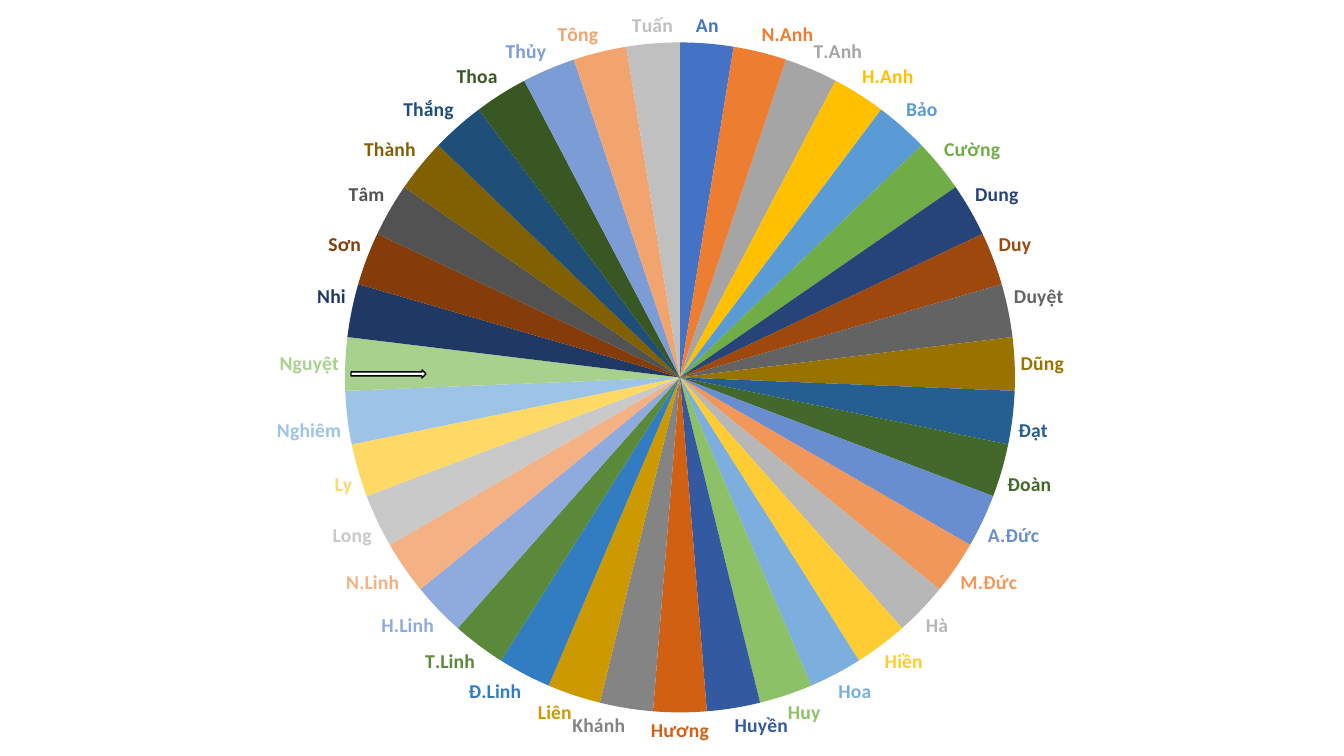
"""Build a name wheel: a pie of equal slices with a pointer arrow."""
from dataclasses import dataclass

from lxml.etree import SubElement
from pptx import Presentation
from pptx.chart.chart import Chart
from pptx.chart.data import CategoryChartData
from pptx.dml.color import RGBColor
from pptx.enum.chart import XL_CHART_TYPE, XL_LABEL_POSITION
from pptx.enum.shapes import MSO_SHAPE
from pptx.oxml.ns import qn
from pptx.util import Emu, Pt

PAGE_WIDTH, PAGE_HEIGHT = 1344, 756
SCALE = 12192000 / PAGE_WIDTH
SLICE_VALUE = 3
FONT = "Calibri"
BLACK = RGBColor(0x00, 0x00, 0x00)
WHITE = RGBColor(0xFF, 0xFF, 0xFF)


@dataclass(frozen=True)
class Slice:
    name: str
    colour: RGBColor


@dataclass(frozen=True)
class Area:
    left: int
    top: int
    width: int
    height: int


WHEEL = Area(345, 42, 670, 671)
POINTER = Area(351, 370, 75, 8)

SLICES = [
    Slice("An", RGBColor(0x44, 0x72, 0xC4)),
    Slice("N.Anh", RGBColor(0xED, 0x7D, 0x31)),
    Slice("T.Anh", RGBColor(0xA5, 0xA5, 0xA5)),
    Slice("H.Anh", RGBColor(0xFF, 0xC0, 0x00)),
    Slice("Bảo", RGBColor(0x5B, 0x9B, 0xD5)),
    Slice("Cường", RGBColor(0x70, 0xAD, 0x47)),
    Slice("Dung", RGBColor(0x26, 0x44, 0x78)),
    Slice("Duy", RGBColor(0x9E, 0x48, 0x0E)),
    Slice("Duyệt", RGBColor(0x63, 0x63, 0x63)),
    Slice("Dũng", RGBColor(0x99, 0x73, 0x00)),
    Slice("Đạt", RGBColor(0x25, 0x5E, 0x91)),
    Slice("Đoàn", RGBColor(0x43, 0x68, 0x2B)),
    Slice("A.Đức", RGBColor(0x69, 0x8E, 0xD0)),
    Slice("M.Đức", RGBColor(0xF1, 0x97, 0x5A)),
    Slice("Hà", RGBColor(0xB7, 0xB7, 0xB7)),
    Slice("Hiền", RGBColor(0xFF, 0xCD, 0x33)),
    Slice("Hoa", RGBColor(0x7C, 0xAF, 0xDD)),
    Slice("Huy", RGBColor(0x8C, 0xC1, 0x68)),
    Slice("Huyền", RGBColor(0x33, 0x5A, 0xA1)),
    Slice("Hương", RGBColor(0xD2, 0x60, 0x12)),
    Slice("Khánh", RGBColor(0x84, 0x84, 0x84)),
    Slice("Liên", RGBColor(0xCC, 0x9A, 0x00)),
    Slice("Đ.Linh", RGBColor(0x32, 0x7D, 0xC2)),
    Slice("T.Linh", RGBColor(0x5A, 0x8A, 0x39)),
    Slice("H.Linh", RGBColor(0x8F, 0xAA, 0xDC)),
    Slice("N.Linh", RGBColor(0xF4, 0xB1, 0x83)),
    Slice("Long", RGBColor(0xC9, 0xC9, 0xC9)),
    Slice("Ly", RGBColor(0xFF, 0xD9, 0x66)),
    Slice("Nghiêm", RGBColor(0x9D, 0xC3, 0xE6)),
    Slice("Nguyệt", RGBColor(0xA9, 0xD1, 0x8E)),
    Slice("Nhi", RGBColor(0x20, 0x38, 0x64)),
    Slice("Sơn", RGBColor(0x84, 0x3C, 0x0B)),
    Slice("Tâm", RGBColor(0x52, 0x52, 0x52)),
    Slice("Thành", RGBColor(0x80, 0x60, 0x00)),
    Slice("Thắng", RGBColor(0x1F, 0x4E, 0x79)),
    Slice("Thoa", RGBColor(0x38, 0x57, 0x23)),
    Slice("Thủy", RGBColor(0x7C, 0x9C, 0xD6)),
    Slice("Tông", RGBColor(0xF2, 0xA4, 0x6F)),
    Slice("Tuấn", RGBColor(0xC0, 0xC0, 0xC0)),
]


def px(length: int) -> Emu:
    return Emu(round(length * SCALE))


def place_plot(chart: Chart, area: Area) -> None:
    plot_area = chart.element.find(".//" + qn("c:plotArea"))
    for old_layout in plot_area.findall(qn("c:layout")):
        plot_area.remove(old_layout)
    layout = SubElement(plot_area, qn("c:layout"))
    plot_area.insert(0, layout)
    manual = SubElement(layout, qn("c:manualLayout"))
    settings = {
        "layoutTarget": "inner",
        "xMode": "edge",
        "yMode": "edge",
        "x": area.left / PAGE_WIDTH,
        "y": area.top / PAGE_HEIGHT,
        "w": area.width / PAGE_WIDTH,
        "h": area.height / PAGE_HEIGHT,
    }
    for tag, value in settings.items():
        SubElement(manual, qn(f"c:{tag}")).set("val", str(value))


def add_wheel(page, slices: list[Slice]) -> None:
    data = CategoryChartData()
    data.categories = [item.name for item in slices]
    data.add_series("Series 1", [SLICE_VALUE] * len(slices))
    chart = page.shapes.add_chart(
        XL_CHART_TYPE.PIE, 0, 0, px(PAGE_WIDTH), px(PAGE_HEIGHT), data
    ).chart
    chart.has_title = False
    chart.has_legend = False
    chart.font.name = FONT
    chart.font.size = Pt(10)
    chart.font.color.rgb = BLACK
    chart.plots[0].vary_by_categories = True
    series = chart.plots[0].series[0]
    labels = series.data_labels
    labels.show_category_name = True
    labels.show_value = False
    labels.position = XL_LABEL_POSITION.OUTSIDE_END
    for index, item in enumerate(slices):
        point = series.points[index]
        point.format.fill.solid()
        point.format.fill.fore_color.rgb = item.colour
        point.format.line.fill.background()
        label = point.data_label
        label.position = XL_LABEL_POSITION.OUTSIDE_END
        label.font.name = FONT
        label.font.size = Pt(14)
        label.font.bold = True
        label.font.color.rgb = item.colour
    for label_element in chart.element.iter(qn("c:dLbl")):
        label_element.find(qn("c:showVal")).set("val", "0")
        label_element.find(qn("c:showCatName")).set("val", "1")
    place_plot(chart, WHEEL)


def add_pointer(page, area: Area) -> None:
    arrow = page.shapes.add_shape(
        MSO_SHAPE.RIGHT_ARROW, px(area.left), px(area.top), px(area.width), px(area.height)
    )
    arrow.shadow.inherit = False
    arrow.fill.solid()
    arrow.fill.fore_color.rgb = WHITE
    arrow.line.color.rgb = BLACK
    arrow.line.width = Pt(1)


def main() -> None:
    deck = Presentation()
    deck.slide_width = px(PAGE_WIDTH)
    deck.slide_height = px(PAGE_HEIGHT)
    page = deck.slides.add_slide(deck.slide_layouts[6])
    add_wheel(page, SLICES)
    add_pointer(page, POINTER)
    deck.save("out.pptx")


if __name__ == "__main__":
    main()
